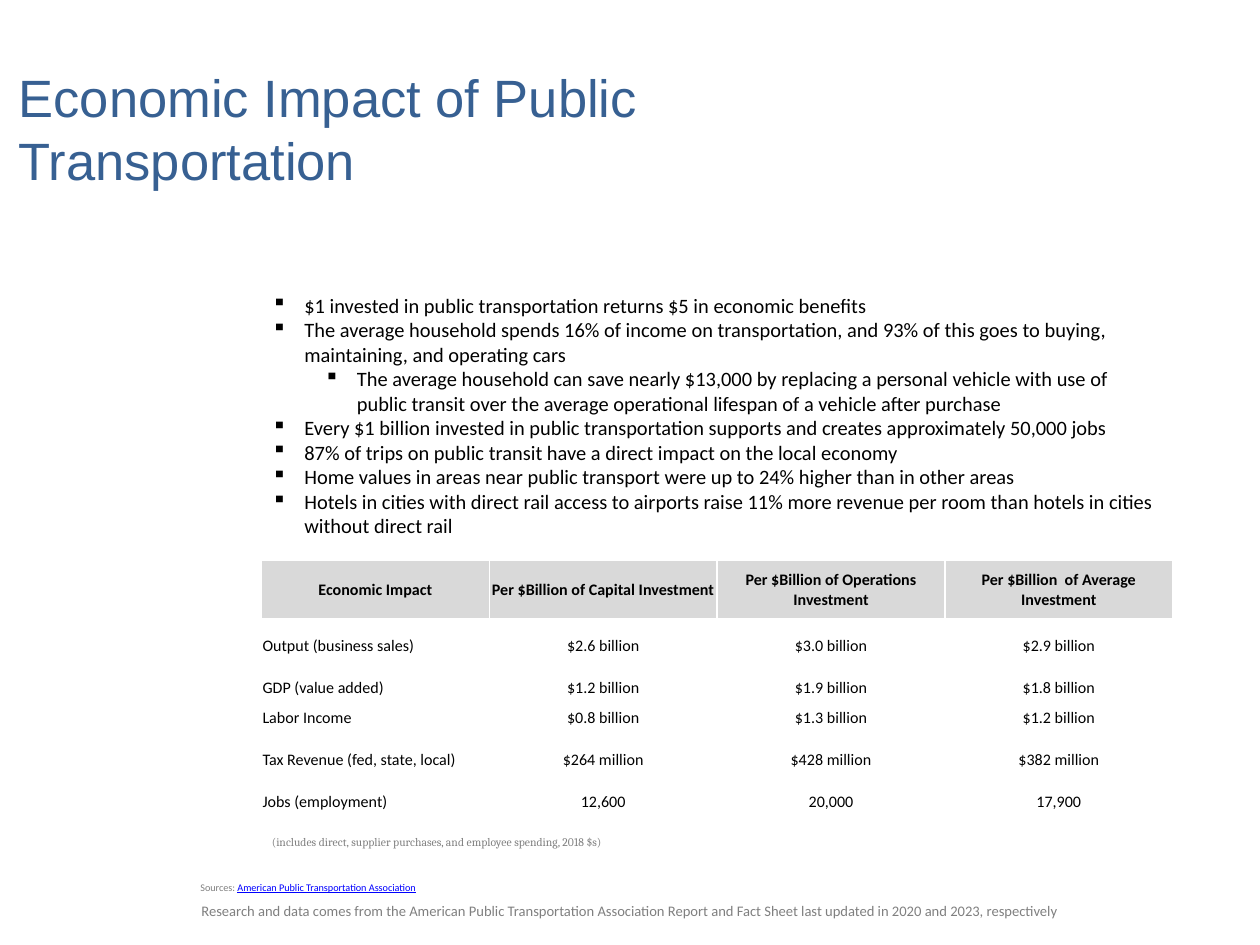
import pptx
import pptx.dml.color
import pptx.enum.text
import pptx.oxml
import pptx.util

Inches = pptx.util.Inches
RGBColor = pptx.dml.color.RGBColor
ALIGN = pptx.enum.text.PP_ALIGN
MIDDLE = pptx.enum.text.MSO_ANCHOR.MIDDLE

TITLE_BLUE = RGBColor(0x37, 0x60, 0x92)
LINK_BLUE = RGBColor(0x00, 0x00, 0xFF)
BLACK = RGBColor(0x00, 0x00, 0x00)
GREY = RGBColor(0x80, 0x80, 0x80)
HEADER_GREY = RGBColor(0xD9, 0xD9, 0xD9)
NAMESPACE = 'xmlns:a="http://schemas.openxmlformats.org/drawingml/2006/main"'


def style_font(font, size, name, color, **formats):
    font.color.rgb = color
    for key, value in {"size": pptx.util.Pt(size), "name": name, **formats}.items():
        setattr(font, key, value)


def add_text(place, text, size, name, color):
    """Add a wrapping text box with one styled run and return its frame."""
    box = page.shapes.add_textbox(*map(Inches, place))
    box.text_frame.word_wrap = True
    span = box.text_frame.paragraphs[0].add_run()
    span.text = text
    style_font(span.font, size, name, color)
    return box.text_frame


deck = pptx.Presentation()
deck.slide_width, deck.slide_height = Inches(12), Inches(9)
page = deck.slides.add_slide(deck.slide_layouts[6])

title = add_text((0.08, 0.32, 9, 1.8), "Economic Impact of Public Transportation",
                 36, "Arial", TITLE_BLUE)
title.vertical_anchor = MIDDLE

# Impact table
table_rows = [
    ("Economic Impact", "Per $Billion of Capital Investment",
     "Per $Billion of Operations Investment", "Per $Billion  of Average Investment"),
    ("Output (business sales)", "$2.6 billion", "$3.0 billion", "$2.9 billion"),
    ("GDP (value added)", "$1.2 billion", "$1.9 billion", "$1.8 billion"),
    ("Labor Income", "$0.8 billion", "$1.3 billion", "$1.2 billion"),
    ("Tax Revenue (fed, state, local)", "$264 million", "$428 million", "$382 million"),
    ("Jobs (employment)", "12,600", "20,000", "17,900"),
]
row_heights = [0.55, 0.52, 0.28, 0.28, 0.52, 0.28]
cell_format = {
    "vertical_anchor": MIDDLE,
    "margin_left": Inches(0.01),
    "margin_right": Inches(0.01),
    "margin_top": Inches(0.01),
    "margin_bottom": 0,
}
table = page.shapes.add_table(len(table_rows), 4, Inches(2.49), Inches(5.34),
                              Inches(8.68), Inches(2.43)).table
table.horz_banding = False
for column in table.columns:
    column.width = Inches(2.17)
for row_index, (labels, height) in enumerate(zip(table_rows, row_heights)):
    table.rows[row_index].height = Inches(height)
    is_header = row_index == 0
    for column_index, label in enumerate(labels):
        cell = table.cell(row_index, column_index)
        cell.text = label
        for key, value in cell_format.items():
            setattr(cell, key, value)
        properties = cell._tc.get_or_add_tcPr()
        for side in "LRTB":
            properties.append(pptx.oxml.parse_xml(
                f'<a:ln{side} {NAMESPACE} w="12700"><a:solidFill>'
                f'<a:srgbClr val="FFFFFF"/></a:solidFill></a:ln{side}>'))
        if is_header:
            cell.fill.solid()
            cell.fill.fore_color.rgb = HEADER_GREY
        else:
            cell.fill.background()
        para = cell.text_frame.paragraphs[0]
        para.alignment = ALIGN.CENTER if is_header or column_index else ALIGN.LEFT
        style_font(para.runs[0].font, 11, "Calibri", BLACK, bold=is_header)

# Bulleted facts, each with its outline level
facts = [
    (0, "$1 invested in public transportation returns $5 in economic benefits"),
    (0, "The average household spends 16% of income on transportation, and 93% of this "
        "goes to buying, maintaining, and operating cars"),
    (1, "The average household can save nearly $13,000 by replacing a personal vehicle with "
        "use of public transit over the average operational lifespan of a vehicle after purchase"),
    (0, "Every $1 billion invested in public transportation supports and creates "
        "approximately 50,000 jobs"),
    (0, "87% of trips on public transit have a direct impact on the local economy"),
    (0, "Home values in areas near public transport were up to 24% higher than in other areas"),
    (0, "Hotels in cities with direct rail access to airports raise 11% more revenue per room "
        "than hotels in cities without direct rail"),
]
facts_box = page.shapes.add_textbox(Inches(2.49), Inches(2.74), Inches(8.68), Inches(2.46))
facts_frame = facts_box.text_frame
facts_frame.word_wrap = True
for index, (level, fact) in enumerate(facts):
    para = facts_frame.add_paragraph() if index else facts_frame.paragraphs[0]
    para.level = level
    properties = para._p.get_or_add_pPr()
    properties.set("marL", str(Inches(0.31 + 0.5 * level)))
    properties.set("indent", str(Inches(-0.31)))
    properties.append(pptx.oxml.parse_xml(f'<a:buChar {NAMESPACE} char="▪"/>'))
    span = para.add_run()
    span.text = fact
    style_font(span.font, 14, "Calibri", BLACK)

# Notes below the table
scope = add_text((2.49, 7.89, 9.02, 0.21),
                 "(includes direct, supplier purchases, and employee spending, 2018 $s)",
                 8, "Cambria", GREY)
sources = add_text((1.81, 8.33, 9.02, 0.21), "Sources: ", 7, "Calibri", GREY)
association = sources.paragraphs[0].add_run()
association.text = "American Public Transportation Association"
style_font(association.font, 7, "Calibri", LINK_BLUE, underline=True)
for frame in (scope, sources):
    frame.paragraphs[0].line_spacing = 1.1

add_text((1.82, 8.54, 9.35, 0.27),
         "Research and data comes from the American Public Transportation Association "
         "Report and Fact Sheet last updated in 2020 and 2023, respectively",
         10, "Calibri", GREY)

deck.save("out.pptx")
